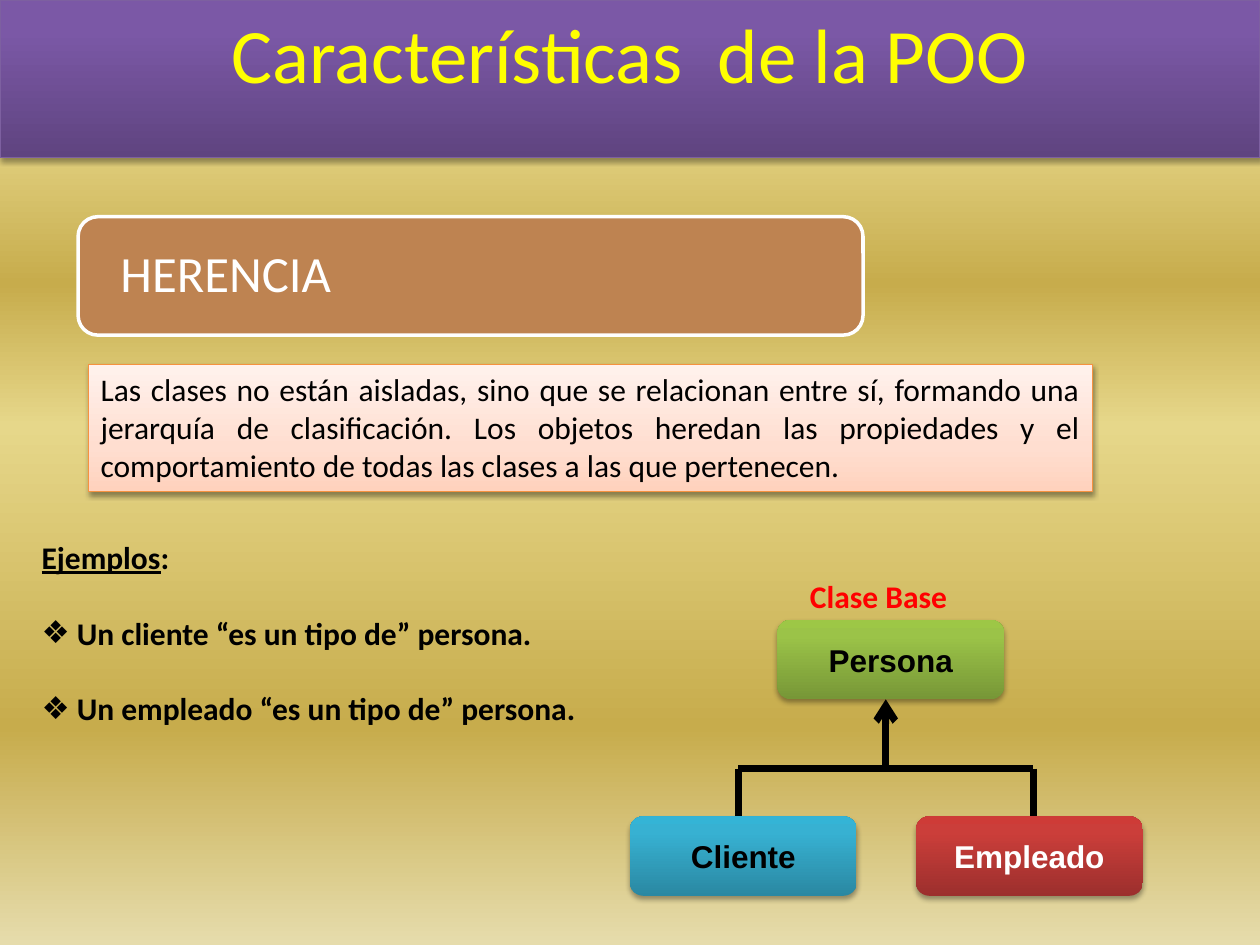
"""Build a slide on inheritance as a feature of object-oriented programming."""
from lxml import etree
from pptx import Presentation
from pptx.dml.color import RGBColor
from pptx.enum.shapes import MSO_CONNECTOR, MSO_SHAPE
from pptx.enum.text import MSO_ANCHOR, MSO_AUTO_SIZE, PP_ALIGN
from pptx.oxml.ns import qn
from pptx.util import Inches, Pt

RECT, ROUNDED = MSO_SHAPE.RECTANGLE, MSO_SHAPE.ROUNDED_RECTANGLE
STRAIGHT = MSO_CONNECTOR.STRAIGHT
TOP, MIDDLE = MSO_ANCHOR.TOP, MSO_ANCHOR.MIDDLE
LEFT, CENTER, JUSTIFY = PP_ALIGN.LEFT, PP_ALIGN.CENTER, PP_ALIGN.JUSTIFY
FIXED = MSO_AUTO_SIZE.NONE

BLACK = RGBColor(0x00, 0x00, 0x00)
WHITE = RGBColor(0xFF, 0xFF, 0xFF)
YELLOW = RGBColor(0xFF, 0xFF, 0x00)
RED = RGBColor(0xFF, 0x00, 0x00)
BROWN = RGBColor(0xBE, 0x83, 0x51)
ORANGE = RGBColor(0xF6, 0x92, 0x40)
PURPLE = RGBColor(0x7D, 0x60, 0xA0)

GOLD_STOPS = [(0, "E6DCAC"), (12, "E6D78A"), (30, "C7AC4C"),
              (45, "E6D78A"), (77, "C7AC4C"), (100, "E6DCAC")]
PURPLE_STOPS = [(0, "5F4480"), (80, "7B58A6"), (100, "7C57A8")]
PEACH_STOPS = [(0, "FFD2BD"), (35, "FFDED0"), (100, "FFF2ED")]
GREEN_STOPS = [(0, "779737"), (80, "9BC348"), (100, "9DC746")]
BLUE_STOPS = [(0, "2A88A2"), (80, "37B1D2"), (100, "34B4D6")]
RED_STOPS = [(0, "9C2F2D"), (80, "CB3E3A"), (100, "CE3B37")]

TITLE = "Características  de la POO"
TOPIC = "HERENCIA"
DEFINITION = ("Las clases no están aisladas, sino que se relacionan entre sí, "
              "formando una jerarquía de clasificación. Los objetos heredan las "
              "propiedades y el comportamiento de todas las clases a las que "
              "pertenecen.")
EXAMPLES_HEADING = "Ejemplos"
EXAMPLES = ["Un cliente “es un tipo de” persona.",
            "Un empleado “es un tipo de” persona."]
BASE_LABEL = "Clase Base"
CLASSES = [("Persona", 6.17, 4.92, GREEN_STOPS, BLACK),
           ("Cliente", 5, 6.48, BLUE_STOPS, BLACK),
           ("Empleado", 7.27, 6.48, RED_STOPS, WHITE)]
CLASS_WIDTH, CLASS_HEIGHT = 1.8, 0.63
STEM_X, BRANCHES_X = 7.03, (5.86, 8.2)
BASE_BOTTOM, BAR_Y, DERIVED_TOP = 5.55, 6.1, 6.48


def place(shape, left, top, width, height):
    shape.left, shape.top = Inches(left), Inches(top)
    shape.width, shape.height = Inches(width), Inches(height)


def paint_gradient(fill, element, stops, angle=90):
    fill.gradient()
    fill.gradient_angle = angle
    stop_list = next(element.iter(qn("a:gsLst")))
    for stop in list(stop_list):
        stop_list.remove(stop)
    for position, color in stops:
        stop = etree.SubElement(stop_list, qn("a:gs"), pos=str(position * 1000))
        etree.SubElement(stop, qn("a:srgbClr"), val=color)


def style_line(shape, color=None, width=0.75):
    if color is None:
        shape.line.fill.background()
    else:
        shape.line.color.rgb = color
        shape.line.width = Pt(width)


def cast_shadow(shape, opacity=35, distance=1.8):
    shape.shadow.inherit = False
    effects = shape._element.spPr.find(qn("a:effectLst"))
    shadow = etree.SubElement(effects, qn("a:outerShdw"), blurRad=str(Pt(3.1)),
                              dist=str(Pt(distance)), dir="5400000", rotWithShape="0")
    color = etree.SubElement(shadow, qn("a:srgbClr"), val=str(BLACK))
    etree.SubElement(color, qn("a:alpha"), val=str(opacity * 1000))


def write(shape, text, size=18, font="Calibri", color=BLACK, bold=False,
          underline=False, align=LEFT, anchor=TOP, spacing=1.0, before=0, add=False):
    frame = shape.text_frame
    frame.word_wrap, frame.auto_size = True, FIXED
    frame.vertical_anchor = anchor
    para = frame.add_paragraph() if add else frame.paragraphs[0]
    para.alignment, para.line_spacing = align, spacing
    para.space_before = Pt(before)
    span = para.add_run()
    span.text = text
    span.font.size, span.font.name = Pt(size), font
    span.font.bold, span.font.underline = bold, underline
    span.font.color.rgb = color
    return para


def set_bullet(para, symbol=None, indent=0.0):
    properties = para._p.get_or_add_pPr()
    properties.set("marL", str(Inches(indent)))
    properties.set("indent", str(-Inches(indent)))
    if symbol:
        etree.SubElement(properties, qn("a:buFont"), typeface="Arial")
        etree.SubElement(properties, qn("a:buChar"), char=symbol)
    else:
        etree.SubElement(properties, qn("a:buNone"))


def connect(page, start, end, arrow=False):
    points = [Inches(value) for value in (*start, *end)]
    line = page.shapes.add_connector(STRAIGHT, *points)
    style_line(line, BLACK, 4)
    properties = line._element.spPr
    if arrow:
        etree.SubElement(properties.find(qn("a:ln")), qn("a:tailEnd"), type="arrow")
    etree.SubElement(properties, qn("a:effectLst"))


def add_box(page, kind, *bounds):
    return page.shapes.add_shape(kind, *[Inches(value) for value in bounds])


def add_heading(page):
    title = page.shapes.title
    place(title, 0, 0, 10, 1.25)
    paint_gradient(title.fill, title._element, PURPLE_STOPS)
    style_line(title, PURPLE)
    cast_shadow(title)
    write(title, TITLE, size=44, color=YELLOW, align=CENTER)

    topic = add_box(page, ROUNDED, 0.62, 1.72, 6.23, 0.94)
    topic.fill.solid()
    topic.fill.fore_color.rgb = BROWN
    style_line(topic, WHITE, 2)
    topic.shadow.inherit = False
    topic.text_frame.margin_left = Inches(0.29)
    write(topic, TOPIC, size=29, color=WHITE, anchor=MIDDLE, spacing=0.9)

    definition = add_box(page, RECT, 0.7, 2.89, 7.97, 1.01)
    paint_gradient(definition.fill, definition._element, PEACH_STOPS)
    style_line(definition, ORANGE)
    cast_shadow(definition, opacity=38, distance=1.6)
    write(definition, DEFINITION, align=JUSTIFY)


def add_examples(page):
    body = page.placeholders[1]
    place(body, 0.23, 4.22, 5.16, 1.92)
    heading = write(body, EXAMPLES_HEADING, bold=True, underline=True)
    set_bullet(heading)
    colon = heading.add_run()
    colon.text = ":"
    colon.font.size, colon.font.name, colon.font.bold = Pt(18), "Calibri", True
    colon.font.color.rgb = BLACK
    for example in EXAMPLES:
        para = write(body, example, bold=True, before=21.6, add=True)
        set_bullet(para, "❖", 0.28)


def add_hierarchy(page):
    for name, left, top, stops, color in CLASSES:
        box = add_box(page, ROUNDED, left, top, CLASS_WIDTH, CLASS_HEIGHT)
        paint_gradient(box.fill, box._element, stops)
        style_line(box)
        cast_shadow(box)
        write(box, name, font="Arial", color=color, bold=True,
              align=CENTER, anchor=MIDDLE)
    connect(page, (STEM_X, BAR_Y), (STEM_X, BASE_BOTTOM), arrow=True)
    connect(page, (BRANCHES_X[0], BAR_Y), (BRANCHES_X[1], BAR_Y))
    for branch in BRANCHES_X:
        connect(page, (branch, BAR_Y), (branch, DERIVED_TOP))
    label = page.shapes.add_textbox(Inches(6.33), Inches(4.53), Inches(1.88), Inches(0.4))
    write(label, BASE_LABEL, color=RED, bold=True)


def main():
    deck = Presentation()
    deck.slide_width, deck.slide_height = Inches(10), Inches(7.5)
    page = deck.slides.add_slide(deck.slide_layouts[1])
    paint_gradient(page.background.fill, page._element, GOLD_STOPS, angle=270)
    add_heading(page)
    add_examples(page)
    add_hierarchy(page)
    deck.save("out.pptx")


if __name__ == "__main__":
    main()
